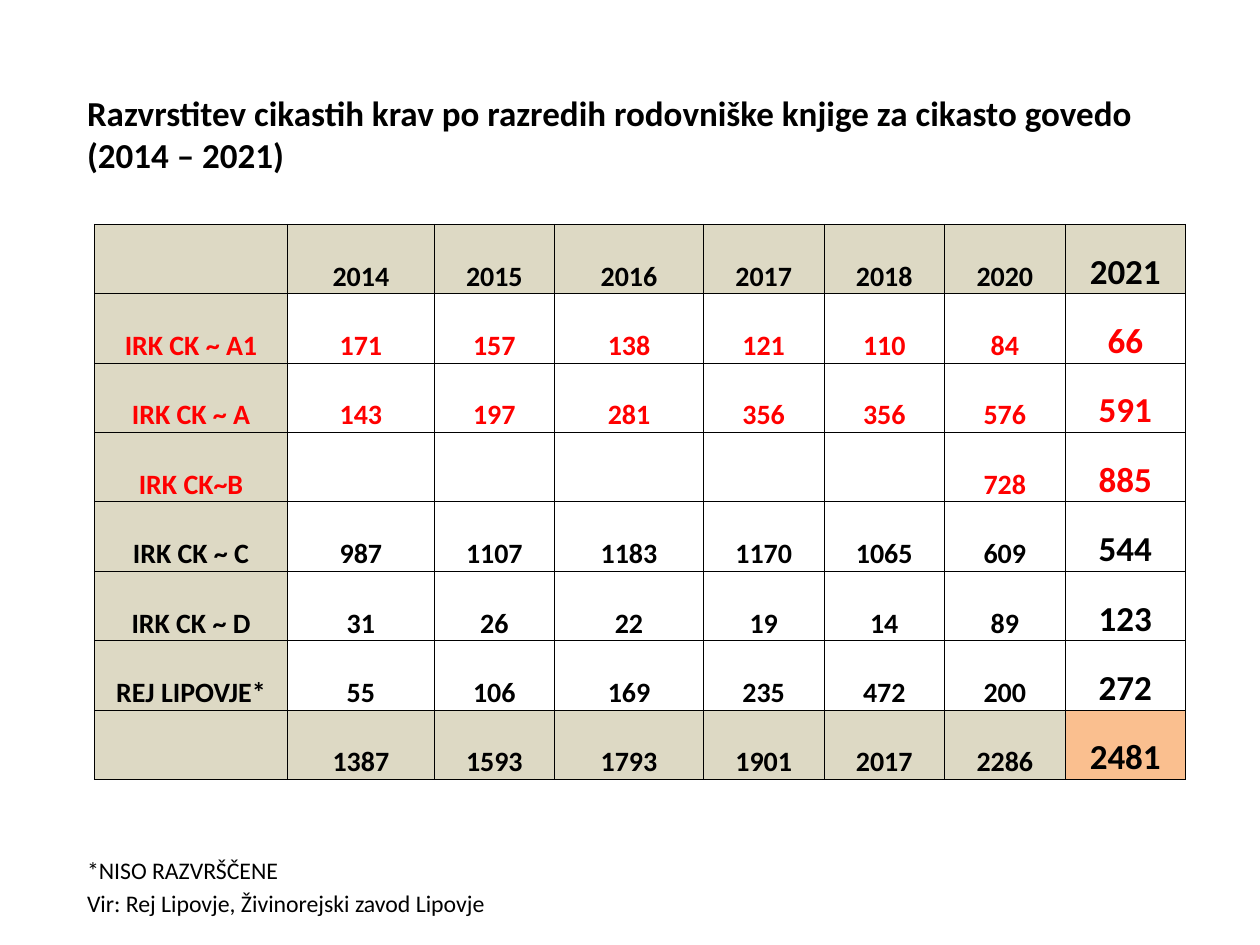
import pptx
import pptx.util
import pptx.dml.color
import pptx.enum.text
import pptx.oxml
import pptx.oxml.ns
from pptx.util import Cm

BLACK = pptx.dml.color.RGBColor(0x00, 0x00, 0x00)
RED = pptx.dml.color.RGBColor(0xFF, 0x00, 0x00)
BEIGE = pptx.dml.color.RGBColor(0xDD, 0xD9, 0xC4)
ORANGE = pptx.dml.color.RGBColor(0xFA, 0xBF, 0x8F)
PP_ALIGN = pptx.enum.text.PP_ALIGN
ANCHOR = pptx.enum.text.MSO_ANCHOR


def format_paragraph(p, size, color, bold, align):
    p.alignment = align
    p.font.name = "Calibri"
    p.font.size = pptx.util.Pt(size)
    p.font.bold = bold
    p.font.color.rgb = color


def add_borders(cell):
    tcPr = cell._tc.get_or_add_tcPr()
    for i, side in enumerate(("lnL", "lnR", "lnT", "lnB")):
        tcPr.insert(i, pptx.oxml.parse_xml(
            f'<a:{side} {pptx.oxml.ns.nsdecls("a")} w="6350"><a:solidFill>'
            f'<a:srgbClr val="{BLACK}"/></a:solidFill></a:{side}>'))


prs = pptx.Presentation()
prs.slide_width, prs.slide_height = Cm(25.4), Cm(19.05)
s = prs.slides.add_slide(prs.slide_layouts[1])

# Title and footnotes
texts = [
    (s.shapes.title, 1.71, 1.96, 20, True, 0,
     ["Razvrstitev cikastih krav po razredih rodovniške knjige za cikasto govedo",
      "(2014 – 2021)"]),
    (s.placeholders[1], 17.12, 1.4, 13.6, False, 2.7,
     ["*NISO RAZVRŠČENE", "Vir: Rej Lipovje, Živinorejski zavod Lipovje"]),
]
for sp, top, height, size, bold, space, lines in texts:
    sp.left, sp.top, sp.width, sp.height = Cm(1.5), Cm(top), Cm(21.6), Cm(height)
    tf = sp.text_frame
    tf.text = "\n".join(lines)
    tf.word_wrap = True
    tf.auto_size = pptx.enum.text.MSO_AUTO_SIZE.NONE
    tf.vertical_anchor = ANCHOR.TOP
    for p in tf.paragraphs:
        format_paragraph(p, size, BLACK, bold, PP_ALIGN.LEFT)
        p.space_before = pptx.util.Pt(space)
        pPr = p._p.get_or_add_pPr()
        pPr.set("marL", "0")
        pPr.set("indent", "0")
        pPr.insert_element_before(
            pptx.oxml.parse_xml(f'<a:buNone {pptx.oxml.ns.nsdecls("a")}/>'),
            "a:tabLst", "a:defRPr", "a:extLst")

# Table of cows by herd book class and year
rows = [
    ["", 2014, 2015, 2016, 2017, 2018, 2020, 2021],
    ["IRK CK ~ A1", 171, 157, 138, 121, 110, 84, 66],
    ["IRK CK ~ A", 143, 197, 281, 356, 356, 576, 591],
    ["IRK CK~B", "", "", "", "", "", 728, 885],
    ["IRK CK ~ C", 987, 1107, 1183, 1170, 1065, 609, 544],
    ["IRK CK ~ D", 31, 26, 22, 19, 14, 89, 123],
    ["REJ LIPOVJE*", 55, 106, 169, 235, 472, 200, 272],
    ["", 1387, 1593, 1793, 1901, 2017, 2286, 2481],
]
widths = [3.9, 2.95, 2.43, 3, 2.43, 2.43, 2.43, 2.43]
last_row, last_col = len(rows) - 1, len(widths) - 1
table = s.shapes.add_table(len(rows), len(widths), Cm(1.9), Cm(4.52),
                           Cm(sum(widths)), Cm(1.4 * len(rows))).table
for column, width in zip(table.columns, widths):
    column.width = Cm(width)

for i, row in enumerate(rows):
    for j, value in enumerate(row):
        cell = table.cell(i, j)
        cell.margin_left = cell.margin_right = 0
        cell.margin_top = cell.margin_bottom = 0
        cell.vertical_anchor = ANCHOR.BOTTOM
        cell.text = str(value)
        format_paragraph(cell.text_frame.paragraphs[0],
                         20 if j == last_col else 16,
                         RED if i in (1, 2, 3) else BLACK, True, PP_ALIGN.CENTER)
        if i in (0, last_row) or j == 0:
            cell.fill.solid()
            total = (i, j) == (last_row, last_col)
            cell.fill.fore_color.rgb = ORANGE if total else BEIGE
        else:
            cell.fill.background()
        add_borders(cell)

prs.save("out.pptx")
